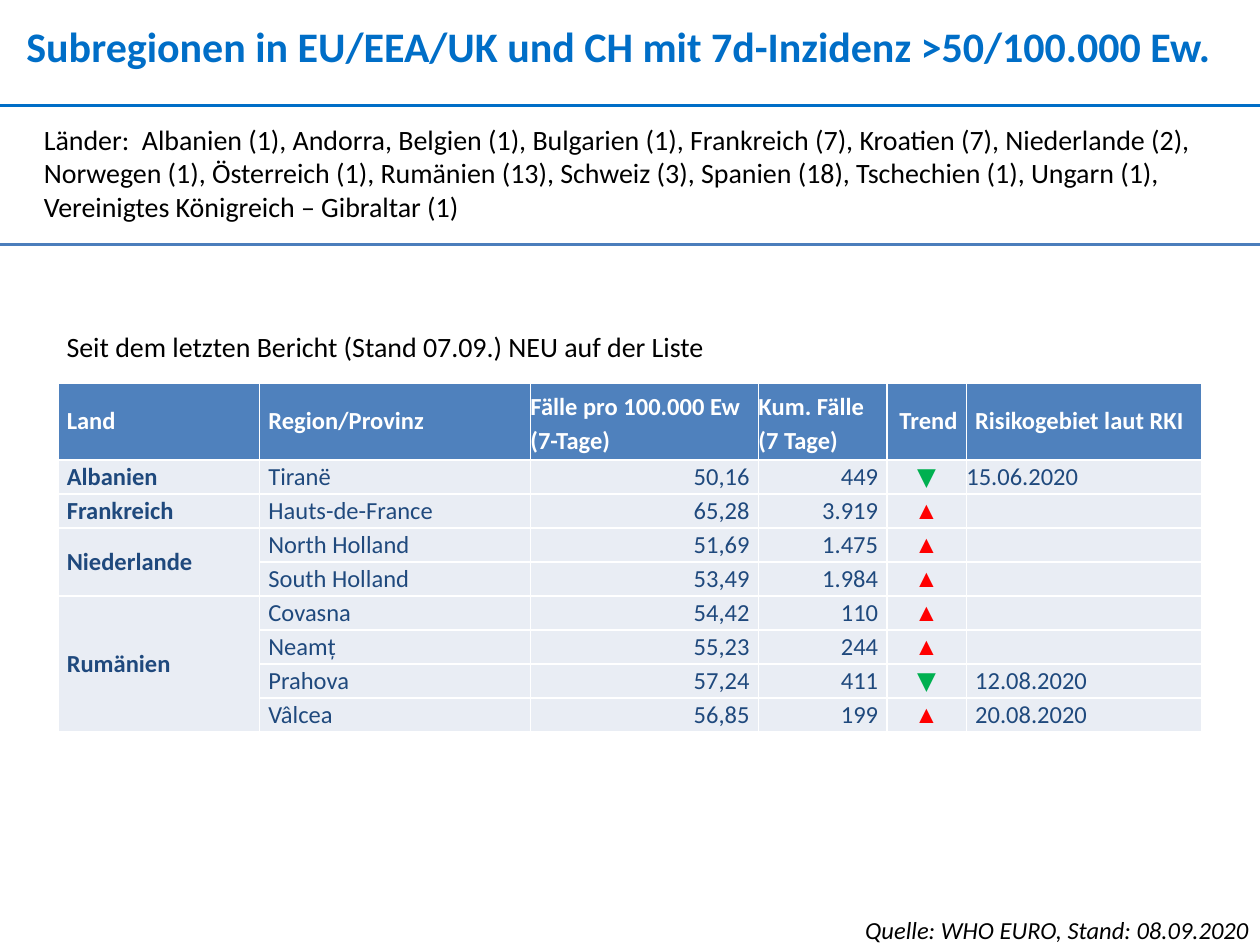
from lxml.etree import SubElement
from pptx import Presentation
from pptx.dml.color import RGBColor as RGB
from pptx.enum.shapes import MSO_CONNECTOR as Conn
from pptx.enum.text import MSO_ANCHOR as Anchor, MSO_AUTO_SIZE as Auto, PP_ALIGN as Align
from pptx.oxml.ns import qn
from pptx.util import Inches, Pt

HUES = {
    "title": "006EC7", "rule": "4B7EBC", "black": "000000", "white": "FFFFFF",
    "head": "4F81BD", "body": "E9EDF4", "ink": "1F497D",
    "up": "FF0000", "down": "00B050",
}
PAD = 0.07
COLS = [1.6, 2.15, 1.81, 1.02, 0.63, 1.87]
SIDES = [Align.LEFT, Align.LEFT, Align.RIGHT, Align.RIGHT, Align.CENTER, Align.LEFT]
HEADS = ["Land", "Region/Provinz", "Fälle pro 100.000 Ew\n(7-Tage)",
         "Kum. Fälle\n(7 Tage)", "Trend", "Risikogebiet laut RKI"]
# An empty country continues the one above
ROWS = [
    ["Albanien", "Tiranë", "50,16", "449", "▼", "15.06.2020"],
    ["Frankreich", "Hauts-de-France", "65,28", "3.919", "▲", ""],
    ["Niederlande", "North Holland", "51,69", "1.475", "▲", ""],
    ["", "South Holland", "53,49", "1.984", "▲", ""],
    ["Rumänien", "Covasna", "54,42", "110", "▲", ""],
    ["", "Neamț", "55,23", "244", "▲", ""],
    ["", "Prahova", "57,24", "411", "▼", "12.08.2020"],
    ["", "Vâlcea", "56,85", "199", "▲", "20.08.2020"],
]
SPANS = [(3, 4), (5, 8)]


def color(name):
    return RGB.from_string(HUES[name])


def add_run(para, text, size, hue, bold=False, italic=False, face="Calibri"):
    run = para.add_run()
    run.text = text
    font = run.font
    font.name, font.size, font.bold, font.italic = face, Pt(size), bold, italic
    font.color.rgb = color(hue)


def add_text(slide, box, text, size, hue="black", side=Align.LEFT, inset=True, **look):
    frame = slide.shapes.add_textbox(*map(Inches, box)).text_frame
    frame.word_wrap = True
    frame.auto_size = Auto.SHAPE_TO_FIT_TEXT
    if not inset:
        frame.margin_left = frame.margin_right = 0
        frame.margin_top = frame.margin_bottom = 0
    para = frame.paragraphs[0]
    para.alignment = side
    add_run(para, text, size, hue, **look)


def add_rule(slide, left, right, y, hue, width):
    line = slide.shapes.add_connector(
        Conn.STRAIGHT, Inches(left), Inches(y), Inches(right), Inches(y))
    line.line.color.rgb = color(hue)
    line.line.width = Pt(width)
    SubElement(line._element.spPr, qn("a:effectLst"))


def fill_cell(cell, text, side, fill, hue, bold=False, pad=True, face="Calibri"):
    cell.fill.solid()
    cell.fill.fore_color.rgb = color(fill)
    cell.vertical_anchor = Anchor.MIDDLE
    cell.margin_left = cell.margin_right = cell.margin_top = cell.margin_bottom = 0
    frame = cell.text_frame
    if not text:
        # Keeps empty cells from stretching their row
        SubElement(frame.paragraphs[0]._p, qn("a:endParaRPr"), sz="1400")
        return
    parts = text.split("\n")
    for i, part in enumerate(parts):
        para = frame.add_paragraph() if i else frame.paragraphs[0]
        para.alignment = side
        if len(parts) > 1:
            para.line_spacing = 1.15
        elif pad:
            para.space_before = para.space_after = Pt(2)
            props = para._p.get_or_add_pPr()
            for edge in ("marL", "marR"):
                props.set(edge, str(Inches(PAD)))
        add_run(para, part, 14, hue, bold, face=face)


def add_grid(slide):
    height = 0.61 + 0.27 * len(ROWS)
    grid = slide.shapes.add_table(
        len(ROWS) + 1, len(COLS), Inches(0.46), Inches(3.04),
        Inches(sum(COLS)), Inches(height)).table
    grid.horz_banding = False
    for col, width in zip(grid.columns, COLS):
        col.width = Inches(width)
    for i, row in enumerate(grid.rows):
        row.height = Inches(0.27 if i else 0.61)

    # Header row
    for c, text in enumerate(HEADS):
        side = Align.RIGHT if text == "Trend" else Align.LEFT
        fill_cell(grid.cell(0, c), text, side, "head", "white", bold=True)

    # Regions
    for r, row in enumerate(ROWS, 1):
        for c, text in enumerate(row):
            hue = {"▲": "up", "▼": "down"}.get(text, "ink")
            face = "Arial" if text == "▲" else "Calibri"
            pad = (r, c) not in [(1, 4), (1, 5), (2, 4)]
            fill_cell(grid.cell(r, c), text, SIDES[c], "body", hue, c == 0, pad, face)
    for first, last in SPANS:
        grid.cell(first, 0).merge(grid.cell(last, 0))


def main():
    deck = Presentation()
    deck.slide_width, deck.slide_height = Inches(10), Inches(7.5)
    slide = deck.slides.add_slide(deck.slide_layouts[6])

    # Title
    add_text(slide, (0.21, 0.16, 9.63, 0.4),
             "Subregionen in EU/EEA/UK und CH mit 7d-Inzidenz >50/100.000 Ew.",
             24, "title", inset=False, bold=True)
    add_rule(slide, 0, 10, 0.84, "title", 1.5)

    # Source, list caption and countries
    add_text(slide, (5.39, 7.21, 4.62, 0.34), "Quelle: WHO EURO, Stand: 08.09.2020",
             14, side=Align.RIGHT, italic=True)
    add_text(slide, (0.43, 2.57, 7.95, 0.37),
             "Seit dem letzten Bericht (Stand 07.09.) NEU auf der Liste", 16)
    add_text(slide, (0.25, 0.92, 9.56, 0.91),
             "Länder:  Albanien (1), Andorra, Belgien (1), Bulgarien (1), "
             "Frankreich (7), Kroatien (7), Niederlande (2), Norwegen (1), "
             "Österreich (1), Rumänien (13), Schweiz (3), Spanien (18), "
             "Tschechien (1), Ungarn (1), Vereinigtes Königreich – Gibraltar (1)", 16)
    add_rule(slide, -0.01, 10.01, 1.94, "rule", 1.75)

    add_grid(slide)
    deck.save("out.pptx")


if __name__ == "__main__":
    main()
